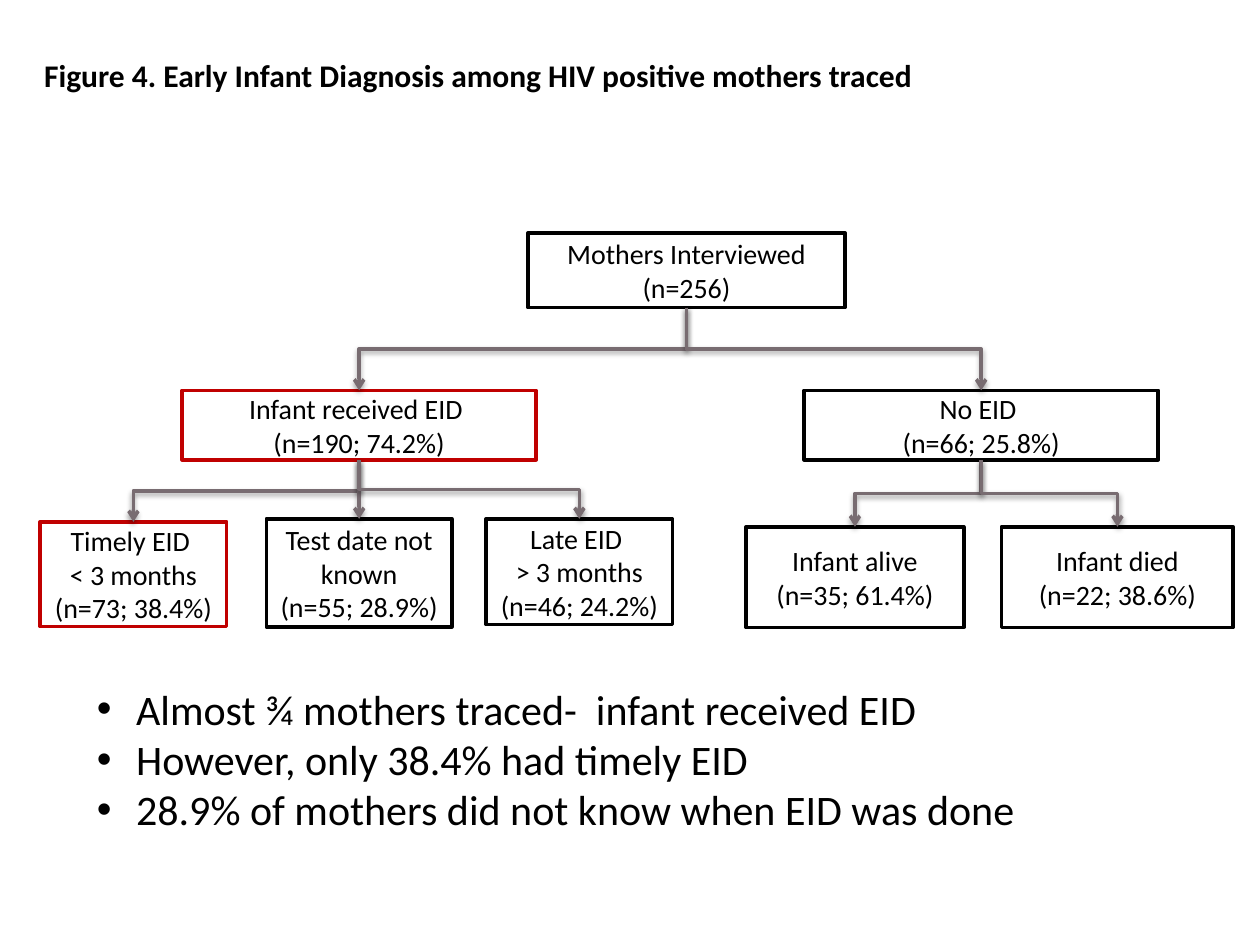
from dataclasses import dataclass

from lxml import etree
from pptx import Presentation
from pptx.dml.color import RGBColor
from pptx.enum.shapes import MSO_CONNECTOR, MSO_SHAPE
from pptx.enum.text import MSO_ANCHOR, MSO_AUTO_SIZE, PP_ALIGN
from pptx.oxml.ns import qn
from pptx.shapes.autoshape import Shape
from pptx.shapes.shapetree import SlideShapes
from pptx.text.text import TextFrame
from pptx.util import Cm, Pt

ELBOW, STRAIGHT = MSO_CONNECTOR.ELBOW, MSO_CONNECTOR.STRAIGHT
RECTANGLE = MSO_SHAPE.RECTANGLE
TOP, MIDDLE = MSO_ANCHOR.TOP, MSO_ANCHOR.MIDDLE
NO_AUTOFIT = MSO_AUTO_SIZE.NONE
LEFT, CENTER = PP_ALIGN.LEFT, PP_ALIGN.CENTER
TOP_SITE, BOTTOM_SITE = 0, 2


@dataclass(frozen=True)
class Theme:
    font: str = "Calibri"
    text: RGBColor = RGBColor(0, 0, 0)
    paper: RGBColor = RGBColor(255, 255, 255)
    outline: RGBColor = RGBColor(0, 0, 0)
    highlight: RGBColor = RGBColor(0xC0, 0, 0)
    arrow: RGBColor = RGBColor(0x78, 0x6C, 0x71)
    title_size: Pt = Pt(18)
    body_size: Pt = Pt(24)
    box_size: Pt = Pt(16)
    line_width: Pt = Pt(2)


@dataclass(frozen=True)
class Group:
    key: str
    lines: tuple[str, ...]
    left: float
    top: float
    width: float
    height: float
    parent: str = ""
    highlighted: bool = False


THEME = Theme()
TITLE = "Figure 4. Early Infant Diagnosis among HIV positive mothers traced"
FINDINGS = (
    "Almost ¾ mothers traced-  infant received EID",
    "However, only 38.4% had timely EID",
    "28.9% of mothers did not know when EID was done",
)
GROUPS = (
    Group("mothers", ("Mothers Interviewed", "(n=256)"), 10.64, 4.7, 6.4, 1.5),
    Group("received", ("Infant received EID ", "(n=190; 74.2%)"),
          3.67, 7.87, 7.14, 1.4, "mothers", True),
    Group("none", ("No EID ", "(n=66; 25.8%)"), 16.21, 7.87, 7.14, 1.4, "mothers"),
    Group("timely", ("Timely EID ", "< 3 months (n=73; 38.4%)"),
          0.81, 10.52, 3.76, 2.11, "received", True),
    Group("unknown", ("Test date not known", "(n=55; 28.9%)"),
          5.37, 10.46, 3.74, 2.18, "received"),
    Group("late", ("Late EID ", "> 3 months (n=46; 24.2%)"),
          9.8, 10.46, 3.76, 2.13, "received"),
    Group("alive", ("Infant alive", "(n=35; 61.4%)"), 15.04, 10.62, 4.39, 2.03, "none"),
    Group("died", ("Infant died", "(n=22; 38.6%)"), 20.19, 10.62, 4.67, 2.03, "none"),
)


def apply(target: object, values: dict[str, object]) -> None:
    for name, value in values.items():
        setattr(target, name, value)


def write(frame: TextFrame, lines: tuple[str, ...], paragraph_format: dict[str, object],
          font_format: dict[str, object]) -> None:
    for index, line in enumerate(lines):
        paragraph = frame.paragraphs[0] if index == 0 else frame.add_paragraph()
        apply(paragraph, paragraph_format)
        run = paragraph.add_run()
        run.text = line
        apply(run.font, {"name": THEME.font, **font_format})
        run.font.color.rgb = THEME.text


def fill_placeholder(placeholder: Shape, place: dict[str, object], lines: tuple[str, ...],
                     frame_format: dict[str, object], paragraph_format: dict[str, object],
                     font_format: dict[str, object]) -> None:
    apply(placeholder, place)
    placeholder.fill.solid()
    placeholder.fill.fore_color.rgb = THEME.paper
    apply(placeholder.text_frame, {"auto_size": NO_AUTOFIT, "vertical_anchor": TOP,
                                   "word_wrap": True, **frame_format})
    write(placeholder.text_frame, lines, paragraph_format, font_format)


def draw_group(shapes: SlideShapes, group: Group) -> Shape:
    box = shapes.add_shape(RECTANGLE, Cm(group.left), Cm(group.top),
                           Cm(group.width), Cm(group.height))
    box.shadow.inherit = False
    box.fill.solid()
    box.fill.fore_color.rgb = THEME.paper
    box.line.color.rgb = THEME.highlight if group.highlighted else THEME.outline
    box.line.width = THEME.line_width
    apply(box.text_frame, {"word_wrap": True, "vertical_anchor": MIDDLE})
    write(box.text_frame, group.lines, {"alignment": CENTER}, {"size": THEME.box_size})
    return box


def draw_branch(shapes: SlideShapes, parent: Shape, child: Shape) -> None:
    start_x, end_x = (box.left + box.width // 2 for box in (parent, child))
    start_y, end_y = parent.top + parent.height, child.top
    shift, drop = end_x - start_x, end_y - start_y
    bent = abs(shift) > Cm(0.05)
    branch = shapes.add_connector(ELBOW if bent else STRAIGHT,
                                  start_x, start_y, end_x, end_y)
    branch.begin_connect(parent, BOTTOM_SITE)
    branch.end_connect(child, TOP_SITE)
    properties = branch.element.spPr
    if bent:
        span = abs(shift)
        apply(branch, {"left": (start_x + end_x - drop) // 2,
                       "top": (start_y + end_y - span) // 2,
                       "width": drop, "height": span})
        turn = {"rot": "16200000", "flipH": "1"} if shift > 0 else {"rot": "5400000", "flipH": "0"}
        for name, value in turn.items():
            properties.find(qn("a:xfrm")).set(name, value)
    branch.line.color.rgb = THEME.arrow
    branch.line.width = THEME.line_width
    etree.SubElement(properties.find(qn("a:ln")), qn("a:tailEnd"), type="arrow")
    effects = etree.SubElement(properties, qn("a:effectLst"))
    shadow = etree.SubElement(effects, qn("a:outerShdw"), blurRad="40000", dist="20000",
                              dir="5400000", rotWithShape="0")
    shade = etree.SubElement(shadow, qn("a:srgbClr"), val="000000")
    etree.SubElement(shade, qn("a:alpha"), val="38000")


def main() -> None:
    deck = Presentation()
    apply(deck, {"slide_width": Cm(25.4), "slide_height": Cm(19.05)})
    slide = deck.slides.add_slide(deck.slide_layouts[1])
    title, findings = slide.placeholders

    fill_placeholder(
        title,
        {"left": Cm(0.89), "top": Cm(1.12), "width": Cm(23.67), "height": Cm(1.19)},
        (TITLE,),
        {"margin_left": 0, "margin_right": 0, "margin_top": 0, "margin_bottom": 0},
        {"alignment": LEFT, "space_after": Pt(10)},
        {"size": THEME.title_size, "bold": True},
    )
    fill_placeholder(
        findings,
        {"left": Cm(1.7), "top": Cm(13.77), "width": Cm(22.89), "height": Cm(4.2)},
        FINDINGS,
        {"margin_top": 0, "margin_bottom": 0},
        {"space_before": Pt(0)},
        {"size": THEME.body_size},
    )
    for paragraph in findings.text_frame.paragraphs:
        indent = paragraph._p.get_or_add_pPr()
        indent.set("marL", str(Cm(0.79)))
        indent.set("indent", str(-Cm(0.79)))

    boxes = {group.key: draw_group(slide.shapes, group) for group in GROUPS}
    for group in GROUPS:
        if group.parent:
            draw_branch(slide.shapes, boxes[group.parent], boxes[group.key])

    deck.save("out.pptx")


if __name__ == "__main__":
    main()
